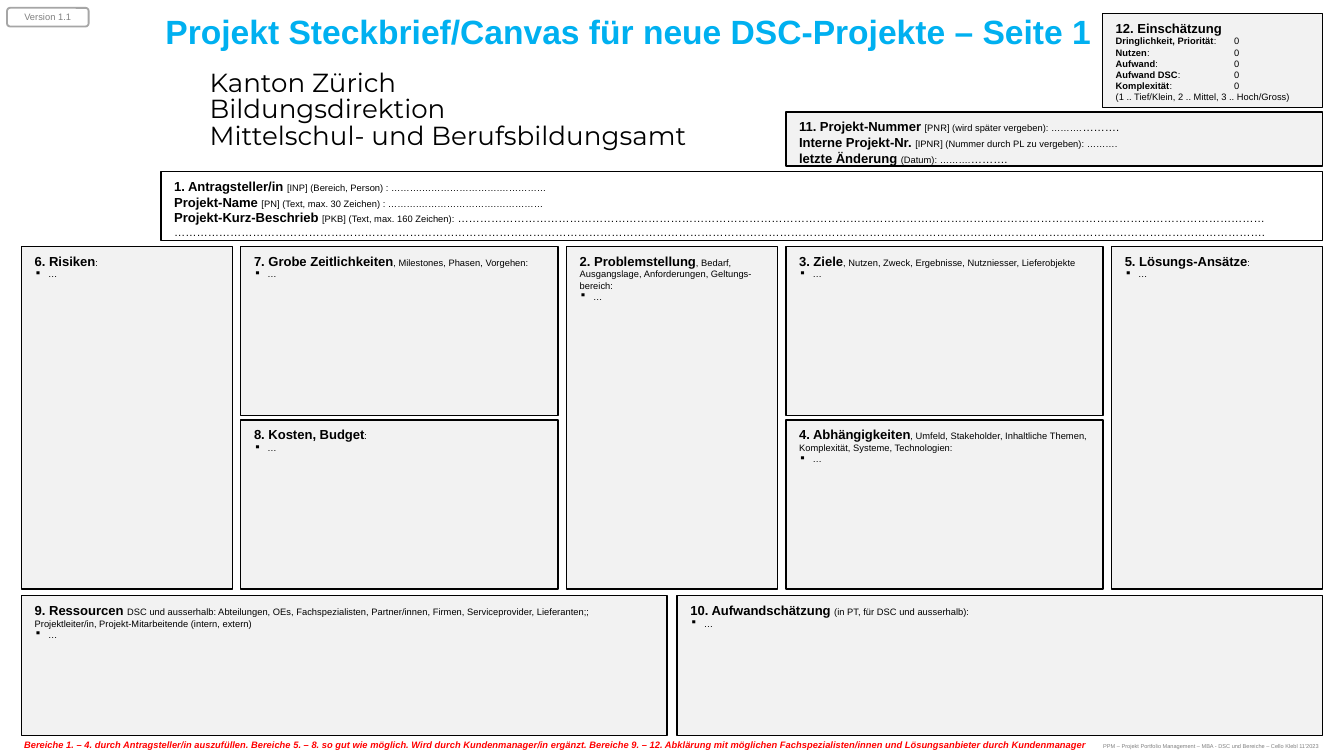
"""Build the project canvas slide for new DSC projects."""
from dataclasses import dataclass
from typing import NamedTuple, Optional

from lxml import etree
from pptx import Presentation
from pptx.dml.color import RGBColor
from pptx.enum.shapes import MSO_SHAPE
from pptx.enum.text import MSO_ANCHOR, PP_ALIGN
from pptx.oxml.ns import qn
from pptx.util import Pt

RECT, ROUND = MSO_SHAPE.RECTANGLE, MSO_SHAPE.ROUNDED_RECTANGLE
TOP, MIDDLE = MSO_ANCHOR.TOP, MSO_ANCHOR.MIDDLE
LEFT, CENTER, RIGHT = PP_ALIGN.LEFT, PP_ALIGN.CENTER, PP_ALIGN.RIGHT


@dataclass(frozen=True)
class Theme:
    font: str = "Arial"
    brand: str = "Montserrat"
    black: RGBColor = RGBColor(0, 0, 0)
    panel: RGBColor = RGBColor(0xF2, 0xF2, 0xF2)
    blue: RGBColor = RGBColor(0, 0xB0, 0xF0)
    red: RGBColor = RGBColor(0xFF, 0, 0)
    gray: RGBColor = RGBColor(0x80, 0x80, 0x80)
    edge: RGBColor = RGBColor(0xA6, 0xA6, 0xA6)
    title: float = 18
    office: float = 14
    head: float = 7
    dots: float = 6
    body: float = 5
    tiny: float = 3


THEME = Theme()


class Area(NamedTuple):
    x: float
    y: float
    w: float
    h: float


class Bit(NamedTuple):
    text: str
    size: float = THEME.body
    bold: bool = False


class Line(NamedTuple):
    bits: tuple[Bit, ...]
    bullet: bool = False
    tab: float = 0


class Panel(NamedTuple):
    area: Area
    lines: tuple[Line, ...]
    fill: Optional[RGBColor] = THEME.panel


class Label(NamedTuple):
    area: Area
    text: str
    size: float
    color: RGBColor
    font: str = THEME.font
    bold: bool = False
    slant: bool = False
    align: PP_ALIGN = LEFT


def entry(head: str, note: str, dots: str = "") -> Line:
    bits = [Bit(head, THEME.head, True), Bit(note)]
    if dots:
        bits.append(Bit(dots, THEME.dots))
    return Line(tuple(bits))


def topic(area: Area, head: str, note: str = ":") -> Panel:
    return Panel(area, (entry(head, note), Line((Bit("…"),), bullet=True)))


def rating(name: str) -> Line:
    return Line((Bit(name, bold=True), Bit(":\t0")), tab=63.4)


def place(shape, area: Area) -> None:
    shape.left, shape.top, shape.width, shape.height = map(Pt, area)


def add_box(slide, kind: MSO_SHAPE, area: Area, fill: Optional[RGBColor],
            edge: RGBColor, width: float):
    shape = slide.shapes.add_shape(kind, *map(Pt, area))
    shape.shadow.inherit = False
    if fill is None:
        shape.fill.background()
    else:
        shape.fill.solid()
        shape.fill.fore_color.rgb = fill
    shape.line.color.rgb = edge
    shape.line.width = Pt(width)
    return shape


def write_line(para, line: Line) -> None:
    props = para._p.get_or_add_pPr()
    if line.bullet:
        props.set("marL", str(Pt(7.2)))
        props.set("indent", str(-Pt(7.2)))
        etree.SubElement(props, qn("a:buChar"), char="▪")
    if line.tab:
        tabs = etree.SubElement(props, qn("a:tabLst"))
        etree.SubElement(tabs, qn("a:tab"), pos=str(Pt(line.tab)), algn="l")
    para.alignment = LEFT
    para.font.name = THEME.font
    para.font.size = Pt(THEME.body)
    para.font.color.rgb = THEME.black
    for bit in line.bits:
        for row, text in enumerate(bit.text.split("\n")):
            if row:
                para.add_line_break()
            run = para.add_run()
            run.text = text
            run.font.size = Pt(bit.size)
            run.font.bold = bit.bold


def draw_panel(slide, panel: Panel) -> None:
    shape = add_box(slide, RECT, panel.area, panel.fill, THEME.black, 0.75)
    frame = shape.text_frame
    frame.word_wrap = True
    frame.vertical_anchor = TOP
    for row, line in enumerate(panel.lines):
        write_line(frame.add_paragraph() if row else frame.paragraphs[0], line)


def write_label(shape, label: Label, anchor: MSO_ANCHOR = TOP):
    place(shape, label.area)
    frame = shape.text_frame
    frame.word_wrap = True
    frame.vertical_anchor = anchor
    para = frame.paragraphs[0]
    para.text = label.text
    para.alignment = label.align
    para.font.name = label.font
    para.font.size = Pt(label.size)
    para.font.bold = label.bold
    para.font.italic = label.slant
    para.font.color.rgb = label.color
    return frame


def draw_label(slide, label: Label):
    return write_label(slide.shapes.add_textbox(*map(Pt, label.area)), label)


def list_panels() -> list[Panel]:
    edge, gap, slim, wide = 11.5, 4.5, 113, 170
    spans, left = [], edge
    for width in (slim, wide, slim, wide, slim):
        spans.append((left, width))
        left += width + gap
    end = left - gap
    top, tall, half = 132, 183.5, 90.5
    low = top + tall - half
    base, depth, broad = 319, 75, 345.75

    def full(col: int) -> Area:
        return Area(spans[col][0], top, spans[col][1], tall)

    def part(col: int, y: float) -> Area:
        return Area(spans[col][0], y, spans[col][1], half)

    rates = ("Dringlichkeit, Priorität", "Nutzen", "Aufwand", "Aufwand DSC", "Komplexität")
    blank = "……….…………………….……………"
    return [
        topic(part(3, low), "4. Abhängigkeiten",
              ", Umfeld, Stakeholder, Inhaltliche Themen, Komplexität, Systeme, Technologien:"),
        topic(full(4), "5. Lösungs-Ansätze"),
        topic(full(2), "2. Problemstellung",
              ", Bedarf, Ausgangslage, Anforderungen, Geltungs-bereich:"),
        topic(part(3, top), "3. Ziele",
              ", Nutzen, Zweck, Ergebnisse, Nutzniesser, Lieferobjekte"),
        Panel(Area(spans[3][0], 60, end - spans[3][0], 29), (
            entry("11. Projekt-Nummer ", "[PNR] (wird später vergeben): ……….", "……….") ,
            entry("Interne Projekt-Nr. ", "[IPNR] (Nummer durch PL zu vergeben): ………."),
            entry("letzte Änderung ", "(Datum): ……….", "………."))),
        topic(part(1, low), "8. Kosten, Budget"),
        topic(Area(end - broad, base, broad, depth), "10. Aufwandschätzung ",
              "(in PT, für DSC und ausserhalb):"),
        topic(full(0), "6. Risiken"),
        topic(Area(edge, base, broad, depth), "9. Ressourcen ",
              "DSC und ausserhalb: Abteilungen, OEs, Fachspezialisten, Partner/innen, Firmen, "
              "Serviceprovider, Lieferanten;; Projektleiter/in, Projekt-Mitarbeitende "
              "(intern, extern)"),
        topic(part(1, top), "7. Grobe Zeitlichkeiten", ", Milestones, Phasen, Vorgehen:"),
        Panel(Area(86.2, 92, end - 86.2, 37), (
            entry("1. Antragsteller/in ", f"[INP] (Bereich, Person) : {blank}"),
            entry("Projekt-Name ", f"[PN] (Text, max. 30 Zeichen) : {blank}"),
            entry("Projekt-Kurz-Beschrieb ", "[PKB] (Text, max. 160 Zeichen): ",
                  "…" * 72 + "\n" + "…" * 97 + ".")), None),
        Panel(Area(590.6, 7.2, end - 590.6, 50.4), (
            Line((Bit("12. Einschätzung", THEME.head, True),)),
            *map(rating, rates),
            Line((Bit("(1 .. Tief/Klein, 2 .. Mittel, 3 .. Hoch/Gross)"),)))),
    ]


def main() -> None:
    deck = Presentation()
    deck.slide_width, deck.slide_height = Pt(720), Pt(405)
    slide = deck.slides.add_slide(deck.slide_layouts[5])
    write_label(slide.shapes.title, Label(
        Area(81.4, 2.2, 555.8, 29), "Projekt Steckbrief/Canvas für neue DSC-Projekte – Seite 1",
        THEME.title, THEME.blue, bold=True))
    office = draw_label(slide, Label(
        Area(112.3, 38.2, 499.7, 29),
        "Kanton Zürich\vBildungsdirektion\vMittelschul- und Berufsbildungsamt",
        THEME.office, THEME.black, THEME.brand))
    office.margin_left = office.margin_right = office.margin_top = office.margin_bottom = 0
    office.paragraphs[0].line_spacing = 0.84
    for panel in list_panels():
        draw_panel(slide, panel)
    draw_label(slide, Label(
        Area(5.8, 392.4, 613.4, 13.7),
        "Bereiche 1. – 4. durch Antragsteller/in auszufüllen. Bereiche 5. – 8. so gut wie möglich. "
        "Wird durch Kundenmanager/in ergänzt. Bereiche 9. – 12. Abklärung mit möglichen "
        "Fachspezialisten/innen und Lösungsanbieter durch Kundenmanager",
        THEME.body, THEME.red, bold=True, slant=True))
    badge = Label(Area(3.8, 4.2, 43.7, 10), "Version 1.1", THEME.body, THEME.gray, align=CENTER)
    write_label(add_box(slide, ROUND, badge.area, None, THEME.edge, 1), badge, MIDDLE)
    draw_label(slide, Label(
        Area(572.4, 394.6, 141.1, 10.8),
        "PPM – Projekt Portfolio Management – MBA - DSC und Bereiche – Cello Klebl 11'2023",
        THEME.tiny, THEME.gray, align=RIGHT))
    deck.save("out.pptx")


if __name__ == "__main__":
    main()
